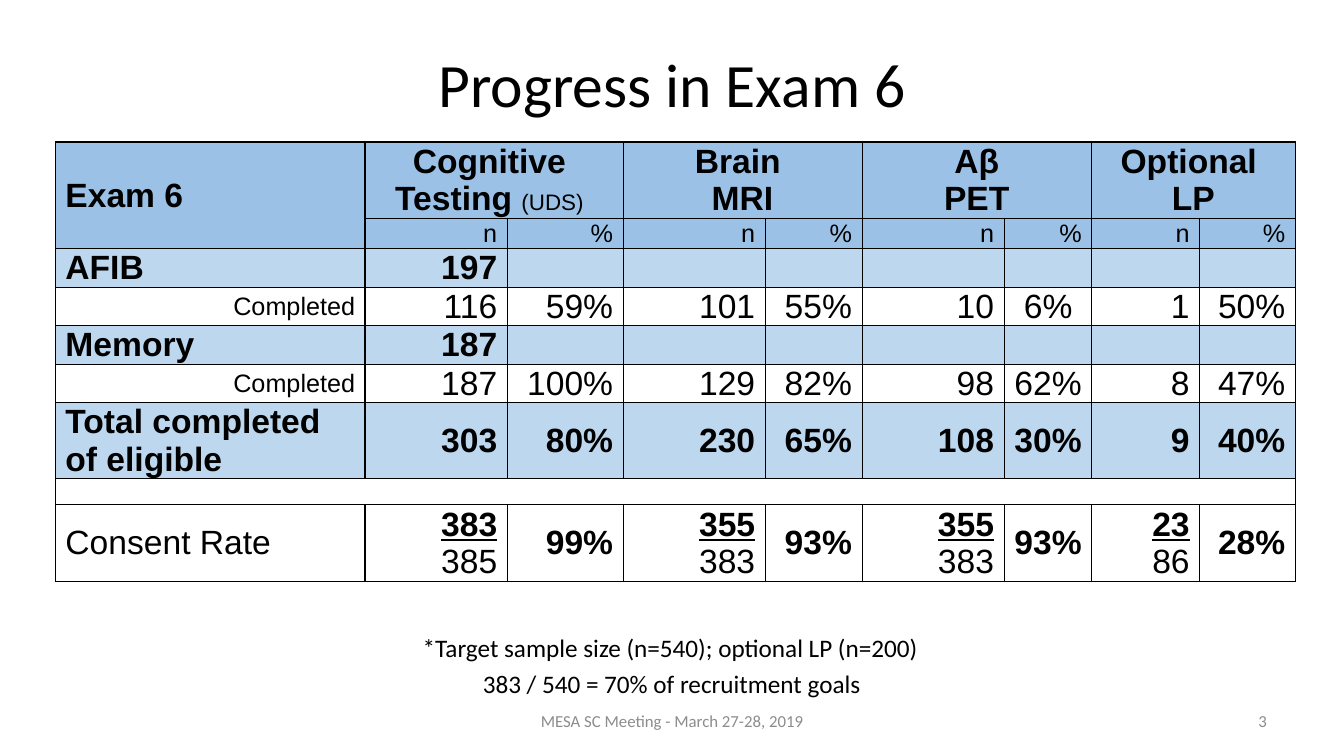
"""Build the Exam 6 progress slide with its table, title and notes on goals."""
from dataclasses import dataclass

from lxml import etree
from pptx import Presentation
from pptx.dml.color import RGBColor
from pptx.enum.text import MSO_ANCHOR, PP_ALIGN
from pptx.oxml.ns import qn
from pptx.util import Cm, Pt

LEFT, MID, RIGHT = PP_ALIGN.LEFT, PP_ALIGN.CENTER, PP_ALIGN.RIGHT
TOP, CORE = MSO_ANCHOR.TOP, MSO_ANCHOR.MIDDLE


@dataclass(frozen=True)
class Theme:
    ink: str = "000000"
    grey: str = "8C8C8C"
    white: str = "FFFFFF"
    head: str = "9BC2E6"
    band: str = "BDD7EE"
    grid: str = "Arial"
    body: str = "Calibri"
    title: int = 44
    big: int = 24
    note: int = 18
    small: int = 16
    foot: int = 12
    thin: float = 0.5
    thick: float = 1


@dataclass(frozen=True)
class Run:
    text: str
    size: int
    bold: bool = False
    under: bool = False


@dataclass(frozen=True)
class Entry:
    lines: tuple[tuple[Run, ...], ...]
    align: PP_ALIGN = RIGHT


@dataclass(frozen=True)
class Row:
    high: float
    fill: str
    cells: tuple[Entry | None, ...] = (None,) * 9


@dataclass(frozen=True)
class Label:
    text: str
    box: tuple[float, float, float, float]
    size: int
    color: str
    align: PP_ALIGN
    anchor: MSO_ANCHOR


THEME = Theme()
WIDTHS = (7.8, 3.58, 2.92, 3.58, 2.44, 3.58, 2.21, 2.72, 2.41)
HEAVY = (0, 1, 7, 9)
SPANS = ((0, 0, 0, 8), (1, 0, 2, 0), (1, 1, 1, 2), (1, 3, 1, 4),
         (1, 5, 1, 6), (1, 7, 1, 8), (8, 0, 8, 8))


def plain(text: str, size: int = THEME.big, bold: bool = False,
          align: PP_ALIGN = RIGHT) -> Entry:
    return Entry(((Run(text, size, bold),),), align)


def group(top: str, low: str, *rest: Run) -> Entry:
    first = (Run(top, THEME.big, True),)
    return Entry((first, (Run(low, THEME.big, True), *rest)), MID)


def ratio(top: str, low: str) -> Entry:
    return Entry(((Run(top, THEME.big, True, True),), (Run(low, THEME.big),)))


def strong(text: str) -> Entry:
    return plain(text, bold=True)


def lead(text: str, bold: bool = True) -> Entry:
    return plain(text, bold=bold, align=LEFT)


def count(name: str, total: str) -> Row:
    return Row(0.97, THEME.band, (lead(name), strong(total)) + (None,) * 7)


def done(*values: str) -> Row:
    cells = (plain("Completed", THEME.note), *map(plain, values))
    return Row(0.97, THEME.white, cells)


UDS = (Run("(UDS)", THEME.small), Run(" ", THEME.big, True))
ROWS = (
    Row(0.96, THEME.white),
    Row(1.92, THEME.head, (
        lead("Exam 6"), group("Cognitive ", "Testing ", *UDS), None,
        group("Brain ", "MRI"), None, group("Aβ", "PET"), None,
        group("Optional ", "LP"), None)),
    Row(0.76, THEME.head,
        (None, *(plain(mark, THEME.note) for mark in "n%" * 4))),
    count("AFIB", "197"),
    done("116", "59%", "101", "55%", "10", "6% ", "1", "50%"),
    count("Memory", "187"),
    done("187", "100%", "129", "82%", "98", "62%", "8", "47%"),
    Row(1.92, THEME.band, (
        lead("Total completed of eligible"),
        *map(strong, ("303", "80%", "230", "65%", "108", "30%", "9", "40%")))),
    Row(0.66, THEME.white),
    Row(1.92, THEME.white, (
        lead("Consent Rate", False), ratio("383", "385"), strong("99%"),
        ratio("355", "383"), strong("93%"), ratio("355", "383"), strong("93%"),
        ratio("23", "86"), strong("28%"))),
)
TITLE = Label("Progress in Exam 6", (1.7, 0.51, 30.48, 3.18),
              THEME.title, THEME.ink, MID, CORE)
LABELS = (
    Label("*Target sample size (n=540); optional LP (n=200)",
          (4.01, 15.8, 25.76, 1.02), THEME.note, THEME.ink, MID, TOP),
    Label("3", (24.28, 17.65, 7.9, 1.02), THEME.foot, THEME.grey, RIGHT, CORE),
    Label("MESA SC Meeting - March 27-28, 2019", (11.58, 17.65, 10.72, 1.02),
          THEME.foot, THEME.grey, MID, CORE),
    Label("383 / 540 = 70% of recruitment goals",
          (9.73, 16.71, 14.4, 1.02), THEME.note, THEME.ink, MID, TOP),
)


def write(para, run: Run, face: str, color: str) -> None:
    part = para.add_run()
    part.text = run.text
    font = part.font
    font.name, font.size = face, Pt(run.size)
    font.bold, font.underline = run.bold, run.under
    font.color.rgb = RGBColor.from_string(color)


def border(cell, side: str, width: float) -> None:
    line = etree.SubElement(cell._tc.get_or_add_tcPr(), qn(f"a:ln{side}"),
                            w=str(Pt(width)))
    if width:
        fill = etree.SubElement(line, qn("a:solidFill"))
        etree.SubElement(fill, qn("a:srgbClr"), val=THEME.ink)
    else:
        etree.SubElement(line, qn("a:noFill"))


def frame(cell, row: int, col: int) -> None:
    home = (row, col, row, col)
    for span in SPANS:
        if span[0] <= row <= span[2] and span[1] <= col <= span[3]:
            home = span
    top, left, low, right = home
    first = (row, col) == (top, left)
    sides = (("L", first or col == left, left in HEAVY),
             ("R", first or col == right, right + 1 in HEAVY),
             ("T", first or row == top, top == 1),
             ("B", first or row == low, low == 0))
    for side, shown, heavy in sides:
        width = THEME.thick if heavy else THEME.thin
        border(cell, side, width if shown and (row or side == "B") else 0)


def fill_cell(cell, entry: Entry | None) -> None:
    cell.vertical_anchor = CORE
    cell.margin_left = cell.margin_right = Cm(0.25)
    cell.margin_top, cell.margin_bottom = Cm(0.02), Cm(0)
    text = cell.text_frame
    if entry is None:
        etree.SubElement(text.paragraphs[0]._p, qn("a:endParaRPr"),
                         sz=str(THEME.foot * 100))
        return
    for index, line in enumerate(entry.lines):
        para = text.add_paragraph() if index else text.paragraphs[0]
        para.alignment = entry.align
        for run in line:
            write(para, run, THEME.grid, THEME.ink)


def draw_grid(slide) -> None:
    high = sum(row.high for row in ROWS)
    table = slide.shapes.add_table(len(ROWS), len(WIDTHS), Cm(1.4), Cm(2.62),
                                   Cm(sum(WIDTHS)), Cm(high)).table
    table.first_row = table.horz_banding = False
    for col, width in zip(table.columns, WIDTHS):
        col.width = Cm(width)
    for top, left, low, right in SPANS:
        table.cell(top, left).merge(table.cell(low, right))
    for r, row in enumerate(ROWS):
        table.rows[r].height = Cm(row.high)
        for c, entry in enumerate(row.cells):
            cell = table.cell(r, c)
            frame(cell, r, c)
            cell.fill.solid()
            cell.fill.fore_color.rgb = RGBColor.from_string(row.fill)
            fill_cell(cell, entry)


def draw_label(shape, label: Label) -> None:
    shape.left, shape.top, shape.width, shape.height = map(Cm, label.box)
    text = shape.text_frame
    text.word_wrap, text.vertical_anchor = True, label.anchor
    para = text.paragraphs[0]
    para.alignment = label.align
    write(para, Run(label.text, label.size), THEME.body, label.color)


def main() -> None:
    deck = Presentation()
    deck.slide_width, deck.slide_height = Cm(33.87), Cm(19.05)
    slide = deck.slides.add_slide(deck.slide_layouts[5])
    draw_grid(slide)
    title = slide.shapes.title
    title.element.getparent().append(title.element)
    draw_label(title, TITLE)
    for label in LABELS:
        draw_label(slide.shapes.add_textbox(*map(Cm, label.box)), label)
    deck.save("out.pptx")


if __name__ == "__main__":
    main()
